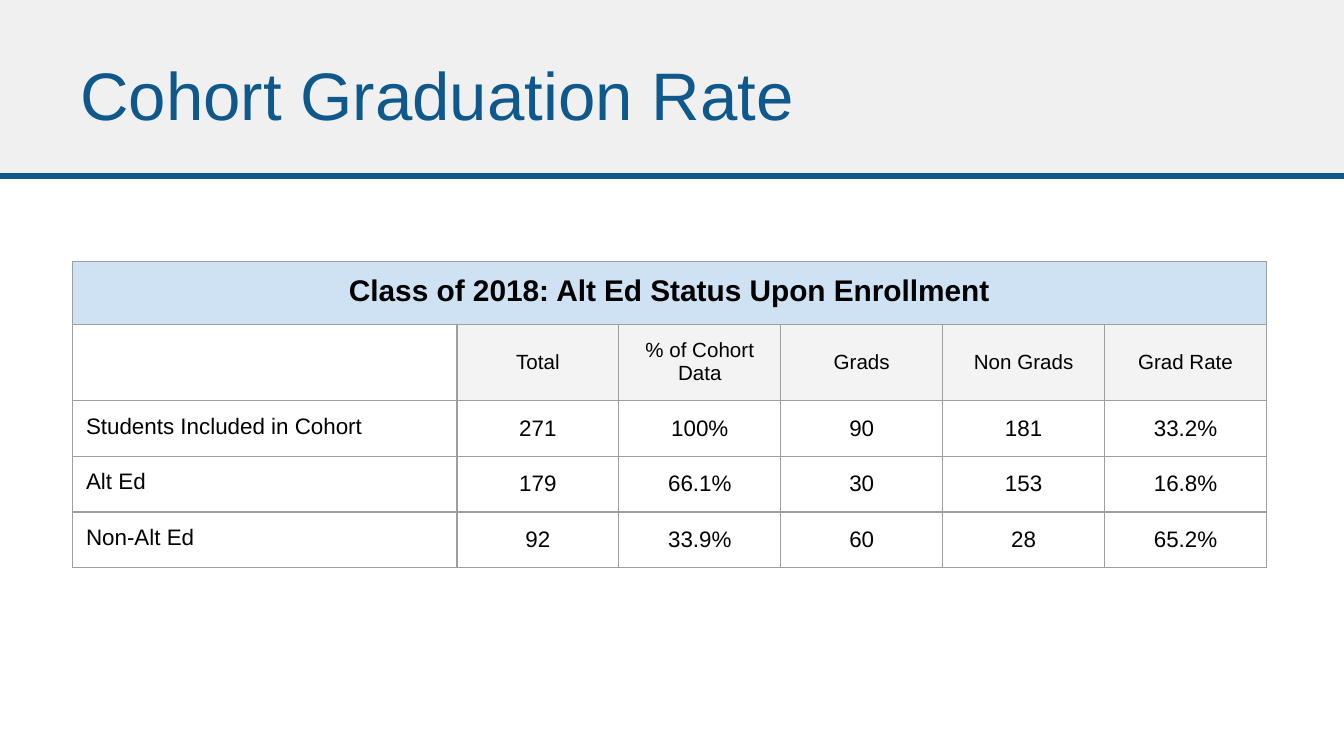
"""Build the cohort graduation rate slide with its title band and data table."""
from dataclasses import dataclass

from lxml import etree
from pptx import Presentation
from pptx import util as u
from pptx.dml.color import RGBColor
from pptx.enum import shapes, text
from pptx.oxml.ns import qn

PX = u.Inches(1) // 200
SLIDE_WIDTH, SLIDE_HEIGHT = 2000, 1125
BAND_HEIGHT = 262
INSET = 20
FONT = "Arial"

BLUE = RGBColor(0x0F, 0x58, 0x8B)
BAND_GREY = RGBColor(0xF0, 0xF0, 0xF0)
HEADER_GREY = RGBColor(0xF3, 0xF3, 0xF3)
HEADING_BLUE = RGBColor(0xCF, 0xE2, 0xF3)
BORDER_GREY = RGBColor(0x9E, 0x9E, 0x9E)
BLACK = RGBColor(0x00, 0x00, 0x00)

TABLE_LEFT, TABLE_TOP = 108, 389
COLUMN_WIDTHS = [572] + [241] * 5
ROW_HEIGHTS = [89, 107] + [83] * 3


@dataclass(frozen=True)
class CellStyle:
    size: int
    bold: bool = False
    fill: RGBColor | None = None
    align: text.PP_ALIGN = text.PP_ALIGN.CENTER
    anchor: text.MSO_ANCHOR = text.MSO_ANCHOR.MIDDLE


HEADING = CellStyle(16, bold=True, fill=HEADING_BLUE, anchor=text.MSO_ANCHOR.TOP)
COLUMN_HEADER = CellStyle(11, fill=HEADER_GREY)
CORNER = CellStyle(11)
ROW_LABEL = CellStyle(12, align=text.PP_ALIGN.LEFT, anchor=text.MSO_ANCHOR.TOP)
VALUE = CellStyle(12)

TABLE_HEADING = "Class of 2018: Alt Ed Status Upon Enrollment"
COLUMN_HEADERS = ["", "Total", "% of Cohort Data", "Grads", "Non Grads", "Grad Rate"]
DATA_ROWS = [
    ["Students Included in Cohort", "271", "100%", "90", "181", "33.2%"],
    ["Alt Ed", "179", "66.1%", "30", "153", "16.8%"],
    ["Non-Alt Ed", "92", "33.9%", "60", "28", "65.2%"],
]


def px(length: int) -> u.Emu:
    return u.Emu(length * PX)


def add_run(paragraph, words: str, size: int, color: RGBColor, bold: bool = False) -> None:
    run = paragraph.add_run()
    run.text = words
    run.font.name = FONT
    run.font.size = u.Pt(size)
    run.font.bold = bold
    run.font.color.rgb = color


def set_insets(box) -> None:
    box.margin_left = box.margin_right = px(INSET)
    box.margin_top = box.margin_bottom = px(INSET)


def add_band(slide) -> None:
    band = slide.shapes.add_shape(
        shapes.MSO_SHAPE.RECTANGLE, 0, 0, px(SLIDE_WIDTH), px(BAND_HEIGHT)
    )
    band.shadow.inherit = False
    band.fill.solid()
    band.fill.fore_color.rgb = BAND_GREY
    band.line.fill.background()

    rule = slide.shapes.add_connector(
        shapes.MSO_CONNECTOR.STRAIGHT, 0, px(BAND_HEIGHT), px(SLIDE_WIDTH), px(BAND_HEIGHT)
    )
    rule.line.color.rgb = BLUE
    rule.line.width = u.Pt(3)
    etree.SubElement(rule.element.spPr, qn("a:effectLst"))


def add_title(slide, words: str) -> None:
    title = slide.shapes.add_textbox(px(100), px(46), px(1534), px(188))
    frame = title.text_frame
    frame.word_wrap = True
    frame.vertical_anchor = text.MSO_ANCHOR.MIDDLE
    set_insets(frame)
    add_run(frame.paragraphs[0], words, 36, BLUE)


def add_borders(cell) -> None:
    properties = cell._tc.get_or_add_tcPr()
    for side in ("lnL", "lnR", "lnT", "lnB"):
        line = etree.SubElement(properties, qn(f"a:{side}"), w=str(u.Pt(0.75)))
        fill = etree.SubElement(line, qn("a:solidFill"))
        etree.SubElement(fill, qn("a:srgbClr"), val=str(BORDER_GREY))


def fill_cell(cell, words: str, style: CellStyle) -> None:
    add_borders(cell)
    set_insets(cell)
    cell.vertical_anchor = style.anchor
    if style.fill is None:
        cell.fill.background()
    else:
        cell.fill.solid()
        cell.fill.fore_color.rgb = style.fill
    paragraph = cell.text_frame.paragraphs[0]
    paragraph.alignment = style.align
    if words:
        add_run(paragraph, words, style.size, BLACK, style.bold)
    else:
        paragraph.font.size = u.Pt(style.size)


def add_cohort_table(slide) -> None:
    table = slide.shapes.add_table(
        len(ROW_HEIGHTS), len(COLUMN_WIDTHS), px(TABLE_LEFT), px(TABLE_TOP),
        px(sum(COLUMN_WIDTHS)), px(sum(ROW_HEIGHTS)),
    ).table
    table.first_row = table.horz_banding = False
    for column, width in zip(table.columns, COLUMN_WIDTHS):
        column.width = px(width)
    for row, height in zip(table.rows, ROW_HEIGHTS):
        row.height = px(height)

    value_count = len(COLUMN_WIDTHS) - 1
    rows = [
        ([TABLE_HEADING] + [""] * value_count, [HEADING] * len(COLUMN_WIDTHS)),
        (COLUMN_HEADERS, [CORNER] + [COLUMN_HEADER] * value_count),
    ]
    rows += [(row, [ROW_LABEL] + [VALUE] * value_count) for row in DATA_ROWS]
    for row, (entries, styles) in zip(table.rows, rows):
        for cell, words, style in zip(row.cells, entries, styles):
            fill_cell(cell, words, style)
    table.cell(0, 0).merge(table.cell(0, value_count))


def main() -> None:
    presentation = Presentation()
    presentation.slide_width = px(SLIDE_WIDTH)
    presentation.slide_height = px(SLIDE_HEIGHT)
    slide = presentation.slides.add_slide(presentation.slide_layouts[6])
    add_band(slide)
    add_title(slide, "Cohort Graduation Rate")
    add_cohort_table(slide)
    presentation.save("out.pptx")


if __name__ == "__main__":
    main()
